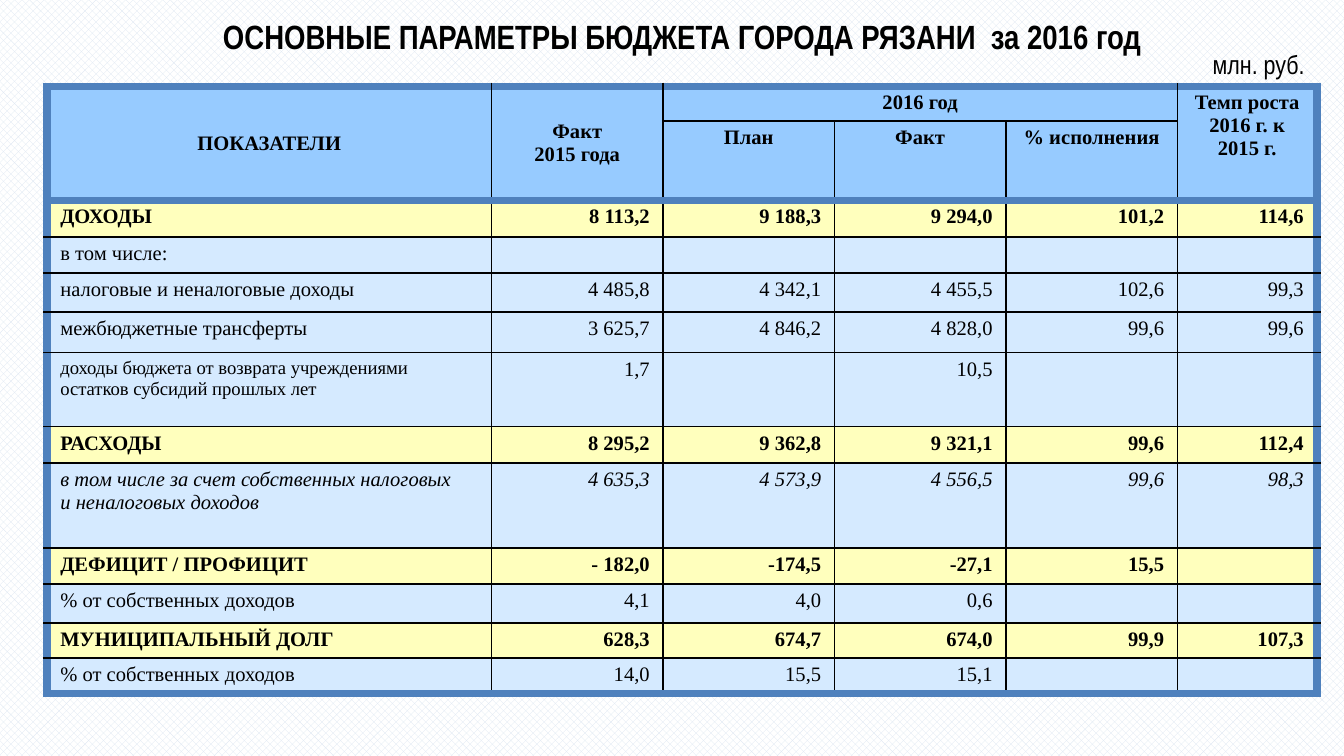
import pptx
import pptx.util
import pptx.dml.color
import pptx.enum.dml
import pptx.enum.text
import pptx.oxml.ns
from lxml import etree

Cm, Pt = pptx.util.Cm, pptx.util.Pt
ALIGN = pptx.enum.text.PP_ALIGN
ANCHOR = pptx.enum.text.MSO_ANCHOR
qn = pptx.oxml.ns.qn

# Content
TITLE = "ОСНОВНЫЕ ПАРАМЕТРЫ БЮДЖЕТА ГОРОДА РЯЗАНИ  за 2016 год"
UNIT = "млн. руб."
# row, column, rows spanned, columns spanned, anchor, lines
HEADINGS = [
    (0, 0, 2, 1, ANCHOR.MIDDLE, ["ПОКАЗАТЕЛИ"]),
    (0, 1, 2, 1, ANCHOR.MIDDLE, ["Факт", "2015 года"]),
    (0, 2, 1, 3, ANCHOR.TOP, ["2016 год"]),
    (0, 5, 2, 1, ANCHOR.TOP, ["Темп роста 2016 г. к 2015 г."]),
    (1, 2, 1, 1, ANCHOR.TOP, ["План"]),
    (1, 3, 1, 1, ANCHOR.TOP, ["Факт"]),
    (1, 4, 1, 1, ANCHOR.TOP, ["% исполнения"]),
]
# row style, height in cm, label lines, values
INDICATORS = [
    ("total", 0.69, ["ДОХОДЫ"], ["8 113,2", "9 188,3", "9 294,0", "101,2", "114,6"]),
    ("plain", 0.66, ["в том числе:"], ["", "", "", "", ""]),
    ("plain", 0.74, ["налоговые и неналоговые доходы"],
     ["4 485,8", "4 342,1", "4 455,5", "102,6", "99,3"]),
    ("plain", 0.77, ["межбюджетные трансферты"],
     ["3 625,7", "4 846,2", "4 828,0", "99,6", "99,6"]),
    ("small", 1.4, ["доходы бюджета от возврата учреждениями остатков субсидий прошлых лет"],
     ["1,7", "", "10,5", "", ""]),
    ("total", 0.69, ["РАСХОДЫ"], ["8 295,2", "9 362,8", "9 321,1", "99,6", "112,4"]),
    ("italic", 1.6, ["в том числе за счет собственных налоговых", "и неналоговых доходов"],
     ["4 635,3", "4 573,9", "4 556,5", "99,6", "98,3"]),
    ("total", 0.69, ["ДЕФИЦИТ / ПРОФИЦИТ"], ["- 182,0", "-174,5", "-27,1", "15,5", ""]),
    ("plain", 0.73, ["% от собственных доходов"], ["4,1", "4,0", "0,6", "", ""]),
    ("total", 0.66, ["МУНИЦИПАЛЬНЫЙ ДОЛГ"], ["628,3", "674,7", "674,0", "99,9", "107,3"]),
    ("plain", 0.68, ["% от собственных доходов"], ["14,0", "15,5", "15,1", "", ""]),
]
HEADING_HEIGHTS = [0.66, 1.48]
COLUMN_WIDTHS = [8.4] + [3.24] * 4 + [2.64]

THEME = {
    "heading_font": "Arial Narrow", "table_font": "Times New Roman",
    "title": 18, "unit": 14, "body": 11, "small": 10,
    "text": "000000", "header": "97CBFF", "total": "FFFFBD", "plain": "D5EAFF",
    "frame": ("4F81BD", 4.5), "grid": ("000000", 1),
    "pattern": "DCE6F2", "paper": "FFFFFF",
}


def rgb(code):
    return pptx.dml.color.RGBColor.from_string(code)


def add_run(paragraph, text, font, size, bold=False, italic=False):
    run = paragraph.add_run()
    run.text = text
    run.font.name, run.font.size = THEME[font], Pt(THEME[size])
    run.font.bold, run.font.italic = bold, italic
    run.font.color.rgb = rgb(THEME["text"])


def fill_cell(cell, lines, align, size="body", bold=False, italic=False):
    frame = cell.text_frame
    for index, line in enumerate(lines):
        paragraph = frame.add_paragraph() if index else frame.paragraphs[0]
        paragraph.alignment = align
        if line:
            add_run(paragraph, line, "table_font", size, bold, italic)
        else:
            # An empty cell needs its own type size to keep the row low
            etree.SubElement(paragraph._p, qn("a:endParaRPr"), sz=str(THEME[size] * 100))


def style_cell(cell, row, column, last_row, last_column, color):
    cell.margin_left = cell.margin_right = Cm(0.25)
    cell.margin_top = cell.margin_bottom = Cm(0.1)
    header_rows = len(HEADING_HEIGHTS)
    framed = {
        "a:lnL": column == 0,
        "a:lnR": column == last_column,
        "a:lnT": row in (0, header_rows),
        "a:lnB": row in (header_rows - 1, last_row),
    }
    properties = cell._tc.get_or_add_tcPr()
    for side, is_frame in framed.items():
        line_color, width = THEME["frame" if is_frame else "grid"]
        line = etree.SubElement(properties, qn(side), w=str(Pt(width)))
        solid = etree.SubElement(line, qn("a:solidFill"))
        etree.SubElement(solid, qn("a:srgbClr"), val=line_color)
    cell.fill.solid()
    cell.fill.fore_color.rgb = rgb(THEME[color])


# Slide and background
deck = pptx.Presentation()
deck.slide_width, deck.slide_height = Cm(25.4), Cm(14.29)
slide = deck.slides.add_slide(deck.slide_layouts[5])
background = slide.background.fill
background.patterned()
background.pattern = pptx.enum.dml.MSO_PATTERN.LARGE_CHECKER_BOARD
background.fore_color.rgb = rgb(THEME["pattern"])
background.back_color.rgb = rgb(THEME["paper"])

# Title
title = slide.shapes.title
title.left, title.top, title.width, title.height = Cm(1.3), Cm(0.23), Cm(23.19), Cm(0.89)
title.text_frame.vertical_anchor = ANCHOR.MIDDLE
title.text_frame.paragraphs[0].alignment = ALIGN.CENTER
add_run(title.text_frame.paragraphs[0], TITLE, "heading_font", "title", bold=True)

# Budget table
heights = HEADING_HEIGHTS + [indicator[1] for indicator in INDICATORS]
budget = slide.shapes.add_table(
    len(heights), len(COLUMN_WIDTHS), Cm(0.89), Cm(1.63),
    Cm(sum(COLUMN_WIDTHS)), Cm(sum(heights))).table
budget.first_row = budget.horz_banding = False
for column, width in zip(budget.columns, COLUMN_WIDTHS):
    column.width = Cm(width)
for row, height in zip(budget.rows, heights):
    row.height = Cm(height)

colors = ["header"] * len(HEADING_HEIGHTS) + [
    "total" if indicator[0] == "total" else "plain" for indicator in INDICATORS]
for row, color in enumerate(colors):
    for column in range(len(COLUMN_WIDTHS)):
        style_cell(budget.cell(row, column), row, column,
                   len(heights) - 1, len(COLUMN_WIDTHS) - 1, color)

# Column headings
for row, column, row_span, column_span, anchor, lines in HEADINGS:
    heading = budget.cell(row, column)
    if row_span * column_span > 1:
        heading.merge(budget.cell(row + row_span - 1, column + column_span - 1))
    heading.vertical_anchor = anchor
    fill_cell(heading, lines, ALIGN.CENTER, bold=True)

# Indicator rows
for row, (style, _, label, values) in enumerate(INDICATORS, len(HEADING_HEIGHTS)):
    emphasis = {"bold": style == "total", "italic": style == "italic"}
    label_size = "small" if style == "small" else "body"
    fill_cell(budget.cell(row, 0), label, ALIGN.LEFT, label_size, **emphasis)
    for column, value in enumerate(values, 1):
        fill_cell(budget.cell(row, column), [value], ALIGN.RIGHT, **emphasis)

# Unit of measure
unit = slide.shapes.add_textbox(Cm(22.3), Cm(0.79), Cm(2.79), Cm(0.86)).text_frame
unit.word_wrap = True
unit.margin_left = Cm(0.62)
add_run(unit.paragraphs[0], UNIT, "heading_font", "unit")

deck.save("out.pptx")
